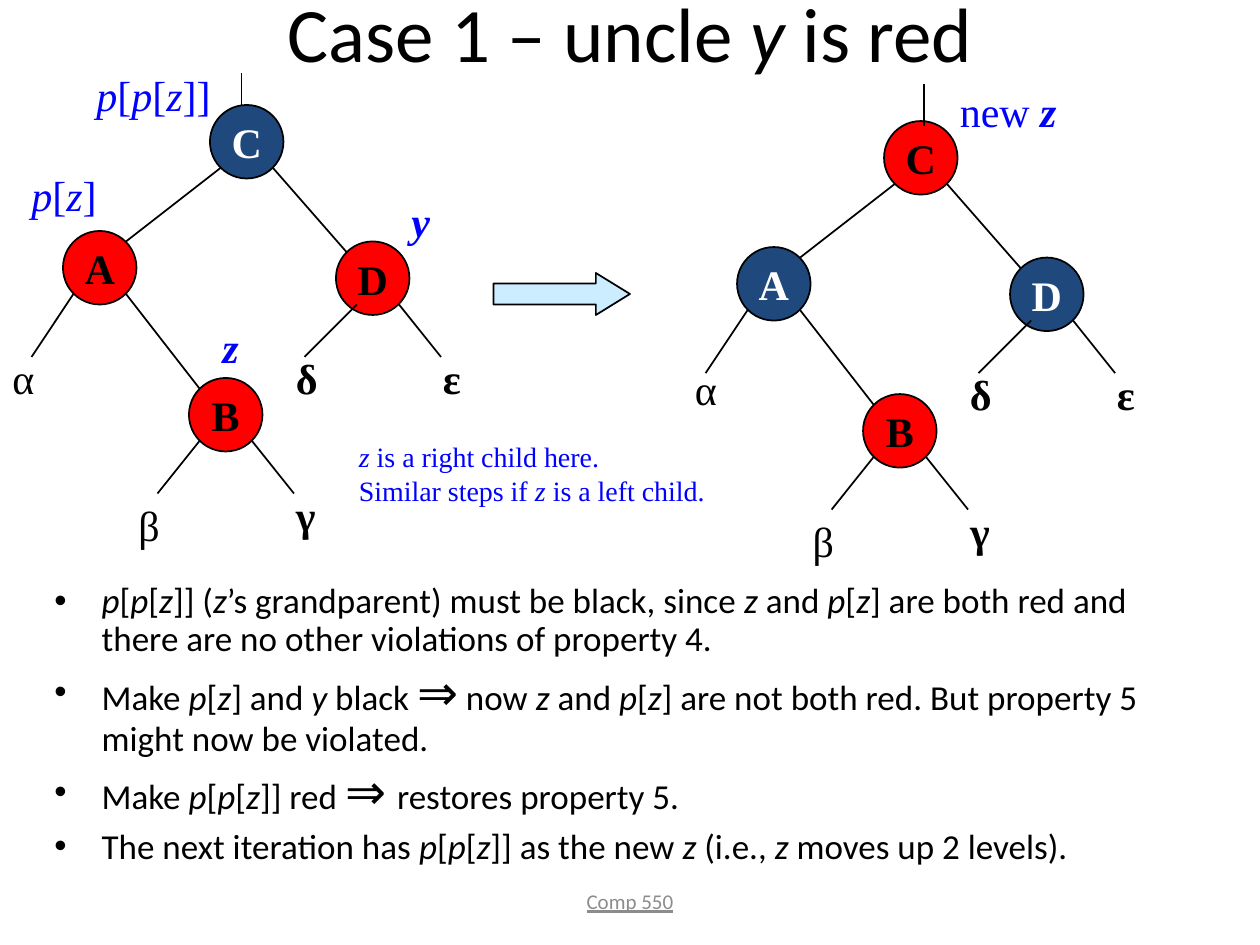
from lxml import etree
from pptx import Presentation
from pptx.dml.color import RGBColor
from pptx.enum import shapes, text
from pptx.oxml import ns
from pptx.util import Pt

COLORS = {"black": "000000", "white": "FFFFFF", "red": "FF0000", "navy": "1F497D",
          "blue": "0000FF", "sky": "CCECFF", "gray": "8C8C8C"}
SERIF = "Times New Roman"


def write(para, marked, size, color="black", font=SERIF, bold=False):
    for index, piece in enumerate(marked.split("*")):
        if piece:
            span = para.add_run()
            span.text = piece
            span.font.name = font
            span.font.size = Pt(28 if piece.startswith("⇒") else size)
            span.font.color.rgb = RGBColor.from_string(COLORS[color])
            span.font.italic = index % 2 == 1
            span.font.bold = bold


def add_box(left, top, width, height, lines, size, color="black", font=SERIF, bold=False, wrap=False):
    box = page.shapes.add_textbox(Pt(left), Pt(top), Pt(width), Pt(height))
    frame = box.text_frame
    frame.word_wrap = wrap
    for index, line in enumerate(lines):
        para = frame.paragraphs[0] if index == 0 else frame.add_paragraph()
        write(para, line, size, color, font, bold)
    return frame


deck = Presentation()
deck.slide_width, deck.slide_height = Pt(720), Pt(540)
page = deck.slides.add_slide(deck.slide_layouts[6])

title = add_box(0, -18, 720, 72, ["Case 1 – uncle *y* is red"], 44, font="Calibri", wrap=True)
footer = add_box(246, 500.4, 228, 28.8, ["Comp 550"], 12, "gray", "Calibri", wrap=True)
footer.paragraphs[0].runs[0].font.underline = True
for frame in (title, footer):
    frame.vertical_anchor = text.MSO_ANCHOR.MIDDLE
    frame.paragraphs[0].alignment = text.PP_ALIGN.CENTER

points = [
    "*p*[*p*[*z*]] (*z*’s grandparent) must be black, since *z *and *p*[*z*] are both red"
    " and there are no other violations of property 4.",
    "Make *p*[*z*] and *y *black **⇒** now *z *and *p*[*z*] are not both red."
    " But property 5 might now be violated.",
    "Make *p*[*p*[*z*]] red **⇒ **restores property 5.",
    "The next iteration has *p*[*p*[*z*]] as the new *z *(i.e., *z *moves up 2 levels).",
]
body = add_box(24, 330, 666, 180, points, 20, font="Calibri", wrap=True)
for para in body.paragraphs:
    para.line_spacing = 0.9
    para.space_before = Pt(5)
    props = para._p.get_or_add_pPr()
    props.set("marL", str(Pt(27)))
    props.set("indent", str(Pt(-27)))
    etree.SubElement(props, ns.qn("a:buFont")).set("typeface", "Arial")
    etree.SubElement(props, ns.qn("a:buChar")).set("char", "•")

nodes = {"C": (120, 60), "A": (36, 132), "D": (192, 138), "B": (108, 216)}
edges = [(126, 96, 72, 138), (156, 96, 198, 144), (72, 168, 114, 222), (42, 168, 18, 204),
         (114, 252, 90, 282), (144, 252, 168, 282), (204, 174, 174, 204), (228, 174, 252, 204)]
leaves = [("β", 72, 282, 27.4, False), ("γ", 162, 276, 29.5, True),
          ("δ", 162, 198, 26.6, True), ("ε", 246, 198, 25.2, True)]
trees = [
    {"shift": (0, 0), "dark": "C", "alpha": (0, 198), "stem": (138, 42, 138, 60)},
    {"shift": (385.2, 9.2), "dark": "AD", "alpha": (390, 204), "stem": (528, 48, 528, 72)},
]
for tree in trees:
    dx, dy = tree["shift"]
    for name, (left, top) in nodes.items():
        dark = name in tree["dark"]
        node = page.shapes.add_shape(shapes.MSO_SHAPE.OVAL, Pt(left + dx), Pt(top + dy), Pt(42), Pt(42))
        node.shadow.inherit = False
        node.fill.solid()
        node.fill.fore_color.rgb = RGBColor.from_string(COLORS["navy" if dark else "red"])
        node.line.color.rgb = RGBColor.from_string(COLORS["black"])
        node.line.width = Pt(1)
        node.text_frame.word_wrap = False
        node.text_frame.vertical_anchor = text.MSO_ANCHOR.MIDDLE
        para = node.text_frame.paragraphs[0]
        para.alignment = text.PP_ALIGN.CENTER
        write(para, name, 24, "white" if dark else "black", bold=True)
    branches = [(x1 + dx, y1 + dy, x2 + dx, y2 + dy) for x1, y1, x2, y2 in edges]
    for ends in branches + [tree["stem"]]:
        branch = page.shapes.add_connector(shapes.MSO_CONNECTOR.STRAIGHT, *map(Pt, ends))
        branch.line.color.rgb = RGBColor.from_string(COLORS["black"])
        branch.line.width = Pt(1)
        etree.SubElement(branch._element.spPr, ns.qn("a:effectLst"))
    add_box(*tree["alpha"], 29.5, 36, ["α"], 24)
    for letter, left, top, width, bold in leaves:
        add_box(left + dx, top + dy, width, 36, [letter], 24, bold=bold)

add_box(120, 180, 23.8, 36, ["*z*"], 24, "blue", bold=True)
add_box(228, 108, 25.2, 36, ["*y*"], 24, "blue", bold=True)
add_box(10.8, 93.6, 51.8, 36, ["*p*[*z*]"], 24, "blue")
add_box(48, 36, 80, 36, ["*p*[*p*[*z*]]"], 24, "blue")
new_z = add_box(541.4, 45.4, 69.8, 36, ["new* z*"], 24, "blue")
new_z.paragraphs[0].runs[1].font.bold = True
add_box(198, 247.7, 213.8, 46, ["*z* is a right child here.", "Similar steps if *z* is a left child."],
        16, "blue")

arrow = page.shapes.add_shape(shapes.MSO_SHAPE.RIGHT_ARROW, Pt(282), Pt(156), Pt(78), Pt(24))
arrow.adjustments[0], arrow.adjustments[1] = 0.5, 0.81
arrow.shadow.inherit = False
arrow.fill.solid()
arrow.fill.fore_color.rgb = RGBColor.from_string(COLORS["sky"])
arrow.line.color.rgb = RGBColor.from_string(COLORS["black"])
arrow.line.width = Pt(1)

deck.save("out.pptx")
